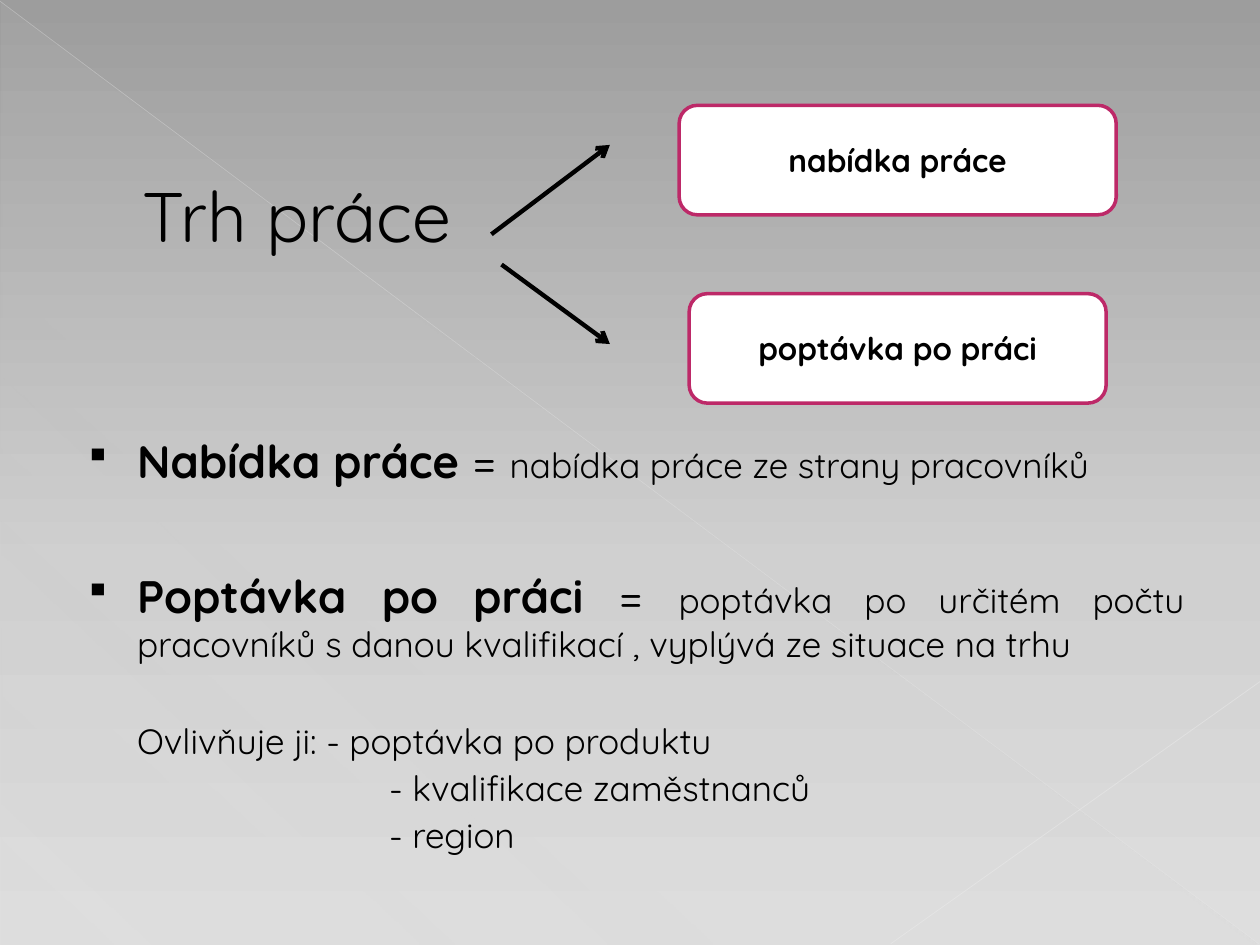
from lxml import etree
from pptx import Presentation
from pptx.dml.color import RGBColor
from pptx.enum.shapes import MSO_CONNECTOR, MSO_SHAPE
from pptx.enum.text import MSO_ANCHOR, PP_ALIGN
from pptx.oxml.ns import qn
from pptx.util import Pt

STRAIGHT = MSO_CONNECTOR.STRAIGHT
TRIANGLE, ROUNDED = MSO_SHAPE.RIGHT_TRIANGLE, MSO_SHAPE.ROUNDED_RECTANGLE
MIDDLE = MSO_ANCHOR.MIDDLE
LEFT, CENTER, JUSTIFY = PP_ALIGN.LEFT, PP_ALIGN.CENTER, PP_ALIGN.JUSTIFY
FONT = "Quicksand"
BLACK, WHITE, PINK = "000000", "FFFFFF", "BD2968"


def color(hex_code):
    return RGBColor.from_string(hex_code)


def set_gradient(fill, owner, stops, angle):
    """Give a fill gradient stops of (position %, colour, opacity %)."""
    fill.gradient()
    gradient = owner.element.find(".//" + qn("a:gradFill"))
    stop_list = gradient.find(qn("a:gsLst"))
    for old_stop in list(stop_list):
        stop_list.remove(old_stop)
    for position, hex_code, opacity in stops:
        stop = etree.SubElement(stop_list, qn("a:gs"), pos=str(position * 1000))
        tint = etree.SubElement(stop, qn("a:srgbClr"), val=hex_code)
        etree.SubElement(tint, qn("a:alpha"), val=str(opacity * 1000))
    gradient.find(qn("a:lin")).set("ang", str(angle * 60000))


deck = Presentation()
deck.slide_width, deck.slide_height = Pt(720), Pt(540)
page = deck.slides.add_slide(deck.slide_layouts[6])

# Background and its pale triangle
set_gradient(page.background.fill, page,
             [(0, "9D9D9D", 100), (60, "D0D0D0", 100), (100, "DEDEDE", 100)], 90)
triangle = page.shapes.add_shape(TRIANGLE, Pt(0.7), Pt(1.4), Pt(718.6), Pt(538.6))
triangle.shadow.inherit = False
set_gradient(triangle.fill, triangle,
             [(0, "D2D2D2", 10), (70, "D2D2D2", 8), (100, "D2D2D2", 1)], 133)
triangle.line.fill.background()

# Faint background lines, then the two arrows: ends, colour, width, opacity, arrow
lines = [
    ((0, 0.7, 719.3, 539.3), "EBEBEB", 0.39, 35, False),
    ((720, 389.5, 509, 539.3), "EDEDED", 0.47, 45, False),
    ((280.8, 133.9, 348.5, 82.8), BLACK, 2.5, 100, True),
    ((286.6, 151.2, 348.5, 196.6), BLACK, 2.5, 100, True),
]
for ends, hex_code, width, opacity, has_arrow in lines:
    line = page.shapes.add_connector(STRAIGHT, *[Pt(value) for value in ends])
    line.line.color.rgb = color(hex_code)
    line.line.width = Pt(width)
    outline = line.element.spPr.find(qn("a:ln"))
    if opacity < 100:
        tint = outline.find(".//" + qn("a:srgbClr"))
        etree.SubElement(tint, qn("a:alpha"), val=str(opacity * 1000))
    if has_arrow:
        etree.SubElement(outline, qn("a:tailEnd"), type="arrow")
    etree.SubElement(line.element.spPr, qn("a:effectLst"))

# Title
title = page.shapes.add_textbox(Pt(36), Pt(20.9), Pt(648), Pt(203.8))
title.text_frame.word_wrap = True
title.text_frame.vertical_anchor = MIDDLE
title.text_frame.text = "Trh práce"
para = title.text_frame.paragraphs[0]
para._p.get_or_add_pPr().set("marL", str(Pt(38.2)))
para.font.name, para.font.size = FONT, Pt(40)
para.font.color.rgb = color(BLACK)

# Definitions: space before, left margin, bullet, alignment, runs of (text, size, bold)
paragraphs = [
    (0, 35.3, True, LEFT, [("Nabídka práce", 26, True), (" = ", 28, False),
                           ("nabídka práce ze strany pracovníků", 20, False)]),
    (43.3, 35.3, True, JUSTIFY, [
        ("Poptávka po práci ", 26, True), ("= ", 28, False),
        ("poptávka po určitém počtu pracovníků s danou kvalifikací , "
         "vyplývá ze situace na trhu", 20, False)]),
    (31, 35.3, False, LEFT, [("Ovlivňuje ji: - poptávka po produktu", 20, False)]),
    (3, 179.3, False, LEFT, [("- kvalifikace zaměstnanců", 20, False)]),
    (3, 179.3, False, LEFT, [("- region", 20, False)]),
]
body = page.shapes.add_textbox(Pt(36), Pt(241.9), Pt(648), Pt(266.4))
frame = body.text_frame
frame.word_wrap = True
for index, (space, margin, bullet, alignment, spans) in enumerate(paragraphs):
    para = frame.add_paragraph() if index else frame.paragraphs[0]
    para.alignment = alignment
    para.space_before = Pt(space)
    properties = para._p.get_or_add_pPr()
    properties.set("marL", str(Pt(margin)))
    if bullet:
        properties.set("indent", str(-Pt(30.2)))
        etree.SubElement(properties, qn("a:buSzPct"), val="80000")
        etree.SubElement(properties, qn("a:buChar"), char="▪")
    for text, size, bold in spans:
        span = para.add_run()
        span.text = text
        span.font.name, span.font.size, span.font.bold = FONT, Pt(size), bold
        span.font.color.rgb = color(BLACK)

# Rounded boxes for the two sides of the market
for text, left, top, width in [("nabídka práce", 388.1, 60.2, 249.8),
                               ("poptávka po práci", 393.8, 167.8, 238.3)]:
    box = page.shapes.add_shape(ROUNDED, Pt(left), Pt(top), Pt(width), Pt(62.6))
    box.shadow.inherit = False
    box.fill.solid()
    box.fill.fore_color.rgb = color(WHITE)
    box.line.color.rgb = color(PINK)
    box.line.width = Pt(2)
    box.text_frame.vertical_anchor = MIDDLE
    box.text_frame.text = text
    para = box.text_frame.paragraphs[0]
    para.alignment = CENTER
    span = para.runs[0]
    span.font.name, span.font.size, span.font.bold = FONT, Pt(18), True
    span.font.color.rgb = color(BLACK)

deck.save("out.pptx")
